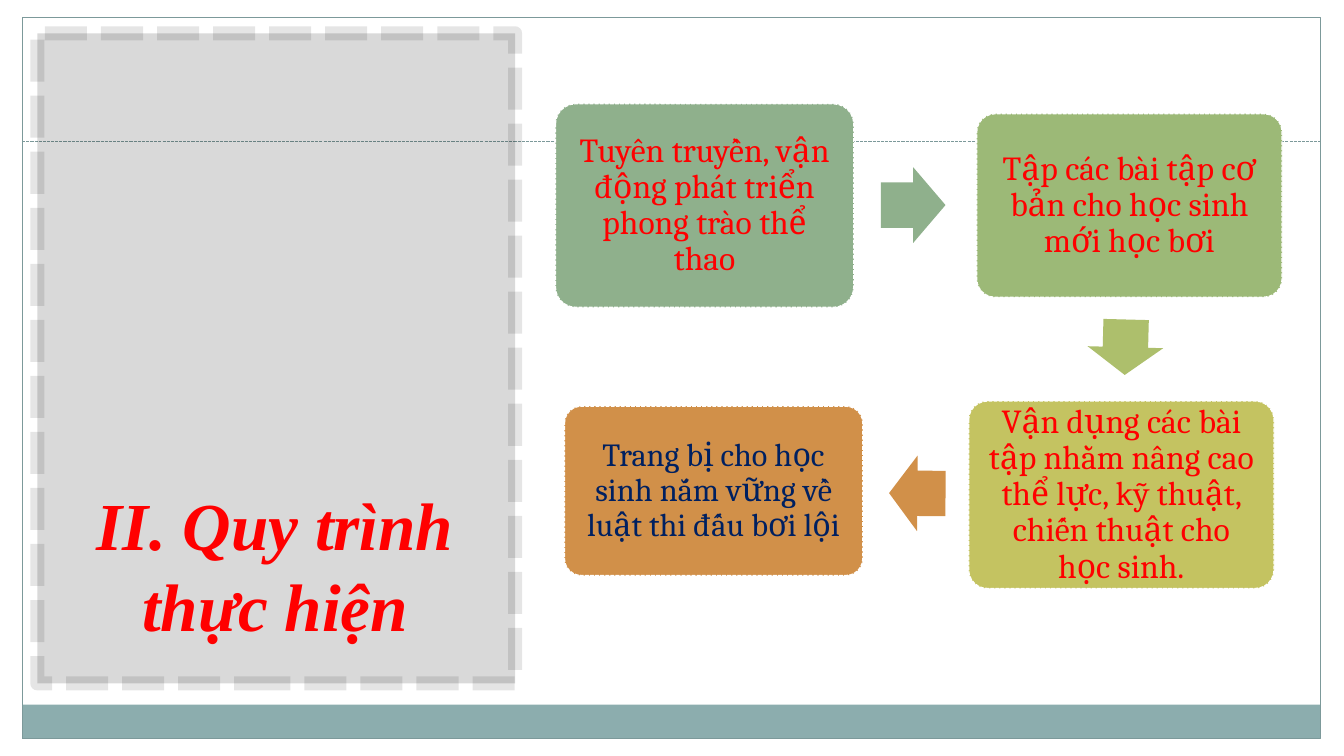
from lxml import etree
from pptx import Presentation
from pptx import util as u
from pptx.dml.color import RGBColor
from pptx.enum import dml, shapes, text
from pptx.oxml import ns

WHITE = RGBColor(0xFF, 0xFF, 0xFF)
BLACK = RGBColor(0x00, 0x00, 0x00)
RED = RGBColor(0xFF, 0x00, 0x00)
NAVY = RGBColor(0x00, 0x20, 0x60)
TEAL = RGBColor(0x8C, 0xAD, 0xAE)
SLATE = RGBColor(0x7C, 0x99, 0x9A)
SAGE = RGBColor(0x8F, 0xB0, 0x8C)
LEAF = RGBColor(0x9C, 0xB9, 0x77)
LIME = RGBColor(0xAD, 0xBF, 0x6C)
OLIVE = RGBColor(0xC4, 0xC3, 0x61)
ORANGE = RGBColor(0xD1, 0x90, 0x49)

SLIDE_W, SLIDE_H = u.Inches(13.33), u.Inches(7.5)
COL, ROW = SLIDE_W / 40, SLIDE_H / 40

FRAME = (0.66, 0.91, 38.64, 38.19)
PANEL = (1.11, 1.76, 14.22, 34.4)
FLOW = (16.53, 5.49, 21.63, 25.65)

STEPS = [
    ((0, 0, 8.88, 10.77), SAGE, RED, 24,
     "Tuyên truyền, vận động phát triển phong trào thể thao"),
    ((12.54, 0.53, 9.09, 9.71), LEAF, RED, 24,
     "Tập các bài tập cơ bản cho học sinh mới học bơi"),
    ((12.3, 15.73, 9.09, 9.92), OLIVE, RED, 24,
     "Vận dụng các bài tập nhằm nâng cao thể lực, kỹ thuật, chiến thuật cho học sinh."),
    ((0.27, 16, 8.88, 8.96), ORANGE, NAVY, 23,
     "Trang bị cho học sinh nắm vững về luật thi đấu bơi lội"),
]
ARROWS = [
    ((9.69, 3.36, 1.92, 4), SAGE, 0),
    ((16.14, 10.88, 1.65, 4), LIME, 91.5),
    ((9.93, 18.61, 1.68, 4), ORANGE, 180.5),
]


def inside(box, part):
    return (box[0] + part[0], box[1] + part[1], part[2], part[3])


def emu(box):
    x, y, w, h = box
    return int(x * COL), int(y * ROW), int(w * COL), int(h * ROW)


def set_line(line, color, width, dash=None):
    line.color.rgb = color
    line.width = u.Pt(width)
    if dash:
        line.dash_style = dash


def set_alpha(fill, percent):
    color = fill._xPr.find(".//" + ns.qn("a:srgbClr"))
    etree.SubElement(color, ns.qn("a:alpha")).set("val", str(percent * 1000))


def add_block(s, kind, box, fill=None):
    sp = s.shapes.add_shape(kind, *emu(box))
    sp.shadow.inherit = False
    if fill is None:
        sp.fill.background()
    else:
        sp.fill.solid()
        sp.fill.fore_color.rgb = fill
    sp.line.fill.background()
    return sp


def add_frame(s, box):
    x, y, w, h = box
    footer_h = 1.81
    add_block(s, shapes.MSO_SHAPE.RECTANGLE, (x, y + h - footer_h, w, footer_h), TEAL)
    border = add_block(s, shapes.MSO_SHAPE.RECTANGLE, box)
    set_line(border.line, SLATE, 0.75)
    left, top, width, _ = emu((x, 7.47, w, 0))
    rule = s.shapes.add_connector(
        shapes.MSO_CONNECTOR.STRAIGHT, left, top, left + width, top)
    set_line(rule.line, SLATE, 0.75, dml.MSO_LINE.SQUARE_DOT)
    etree.SubElement(rule.element.spPr, ns.qn("a:effectLst"))


def add_title_panel(s, box):
    panel = add_block(s, shapes.MSO_SHAPE.RECTANGLE, box, BLACK)
    set_alpha(panel.fill, 15)
    set_line(panel.line, BLACK, 10, dml.MSO_LINE.SQUARE_DOT)
    set_alpha(panel.line.fill, 10)

    title = s.shapes.title
    s.shapes.element.append(title.element)
    title.left, title.top, title.width, title.height = emu(
        inside(box, (0.84, 5.92, 12.48, 26.72)))
    tf = title.text_frame
    tf.text = "II. Quy trình thực hiện"
    tf.word_wrap = True
    tf.auto_size = text.MSO_AUTO_SIZE.NONE
    tf.vertical_anchor = text.MSO_ANCHOR.BOTTOM
    p = tf.paragraphs[0]
    p.alignment = text.PP_ALIGN.CENTER
    p.line_spacing = 1.0
    p.font.name = "Times New Roman"
    p.font.size = u.Pt(48)
    p.font.bold = p.font.italic = True
    p.font.color.rgb = RED


def add_step(s, box, fill, color, size, words):
    sp = add_block(s, shapes.MSO_SHAPE.ROUNDED_RECTANGLE, box, fill)
    sp.adjustments[0] = 0.1
    set_line(sp.line, WHITE, 0.9, dml.MSO_LINE.SQUARE_DOT)
    tf = sp.text_frame
    tf.text = words
    tf.word_wrap = True
    tf.vertical_anchor = text.MSO_ANCHOR.MIDDLE
    tf.margin_left = tf.margin_right = u.Inches(0.13)
    tf.margin_top = tf.margin_bottom = u.Inches(0.13)
    p = tf.paragraphs[0]
    p.alignment = text.PP_ALIGN.CENTER
    p.line_spacing = 0.9
    p.font.name = "Cambria"
    p.font.size = u.Pt(size)
    p.font.color.rgb = color


def add_flow(s, box):
    for part, fill, color, size, words in STEPS:
        add_step(s, inside(box, part), fill, color, size, words)
    for part, fill, angle in ARROWS:
        arrow = add_block(s, shapes.MSO_SHAPE.RIGHT_ARROW, inside(box, part), fill)
        arrow.adjustments[0] = 0.6
        arrow.adjustments[1] = 0.5
        arrow.rotation = angle


def main():
    prs = Presentation()
    prs.slide_width, prs.slide_height = SLIDE_W, SLIDE_H
    s = prs.slides.add_slide(prs.slide_layouts.get_by_name("Title Only"))
    add_frame(s, FRAME)
    add_title_panel(s, PANEL)
    add_flow(s, FLOW)
    prs.save("out.pptx")


if __name__ == "__main__":
    main()
